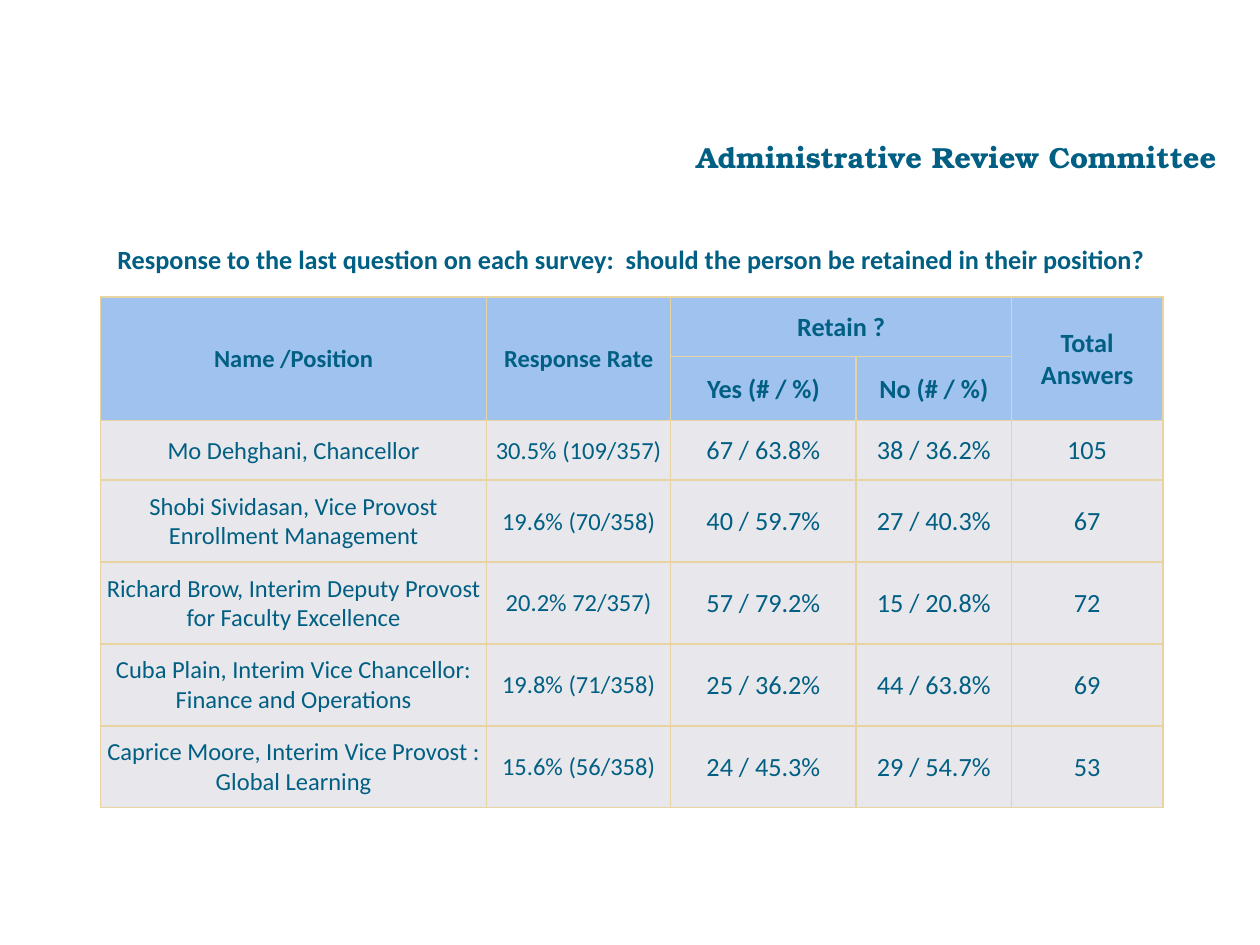
import pptx
import pptx.util
import pptx.dml.color
import pptx.enum.text
import pptx.oxml
import pptx.oxml.ns
from pptx.util import Cm, Pt

ALIGN = pptx.enum.text.PP_ALIGN
ANCHOR = pptx.enum.text.MSO_ANCHOR
INK, GOLD, HEAD, BODY = "005F83", "E8D3A2", "9FC2EF", "E8E7EB"


def color(value):
    return pptx.dml.color.RGBColor.from_string(value)


def write(tf, text, size, bold=False, name="Calibri", align=ALIGN.CENTER):
    p = tf.paragraphs[0]
    p.alignment = align
    r = p.add_run()
    r.text = text
    for key, value in {"size": Pt(size), "bold": bold, "name": name}.items():
        setattr(r.font, key, value)
    r.font.color.rgb = color(INK)
    return p


prs = pptx.Presentation()
prs.slide_width, prs.slide_height = Cm(25.4), Cm(19.05)
s = prs.slides.add_slide(prs.slide_layouts[5])

title = s.shapes.title
box = {"left": Cm(12.73), "top": Cm(2.84), "width": Cm(12.04), "height": Cm(0.81)}
for key, value in box.items():
    setattr(title, key, value)
tf = title.text_frame
tf.auto_size = pptx.enum.text.MSO_AUTO_SIZE.NONE
tf.vertical_anchor = ANCHOR.MIDDLE
p = write(tf, "Administrative Review Committee", 16.6, True, "TeX Gyre Bonum", ALIGN.RIGHT)
p.line_spacing = 0.7

sp = s.shapes.add_textbox(Cm(2.03), Cm(4.78), Cm(21.39), Cm(0.89))
tf = sp.text_frame
tf.word_wrap = False
tf.auto_size = pptx.enum.text.MSO_AUTO_SIZE.SHAPE_TO_FIT_TEXT
write(tf, "Response to the last question on each survey:  "
      "should the person be retained in their position?", 15, True)

rows = [
    ["Name /Position", "Response Rate", "Retain ?", "", "Total Answers"],
    ["", "", "Yes (# / %)", "No (# / %)", ""],
    ["Mo Dehghani, Chancellor", "30.5% (109/357)", "67 / 63.8%", "38 / 36.2%", "105"],
    ["Shobi Sividasan, Vice Provost Enrollment Management",
     "19.6% (70/358)", "40 / 59.7%", "27 / 40.3%", "67"],
    ["Richard Brow, Interim Deputy Provost for Faculty Excellence",
     "20.2% 72/357)", "57 / 79.2%", "15 / 20.8%", "72"],
    ["Cuba Plain, Interim Vice Chancellor: Finance and Operations",
     "19.8% (71/358)", "25 / 36.2%", "44 / 63.8%", "69"],
    ["Caprice Moore, Interim Vice Provost : Global Learning",
     "15.6% (56/358)", "24 / 45.3%", "29 / 54.7%", "53"],
]
widths = [7.78, 3.71, 3.74, 3.13, 3.05]
heights = [1.2, 0.94, 1.2] + [1.65] * 4
tbl = s.shapes.add_table(len(rows), len(widths), Cm(2.03), Cm(5.99),
                         Cm(sum(widths)), Cm(sum(heights))).table
for col, width in zip(tbl.columns, widths):
    col.width = Cm(width)
for row, height in zip(tbl.rows, heights):
    row.height = Cm(height)

cell_format = {"vertical_anchor": ANCHOR.MIDDLE, "margin_left": Cm(0.02),
               "margin_right": Cm(0.02), "margin_top": Cm(0.02), "margin_bottom": 0}
for i, row in enumerate(rows):
    header = i < 2
    for j, text in enumerate(row):
        cell = tbl.cell(i, j)
        for key, value in cell_format.items():
            setattr(cell, key, value)
        if text:
            write(cell.text_frame, text, 14 if j < 2 else 15, header)
        tcPr = cell._tc.get_or_add_tcPr()
        for side in ("lnL", "lnR", "lnT", "lnB"):
            tcPr.append(pptx.oxml.parse_xml(
                f'<a:{side} {pptx.oxml.ns.nsdecls("a")} w="{Pt(1)}"><a:solidFill>'
                f'<a:srgbClr val="{GOLD}"/></a:solidFill></a:{side}>'))
        cell.fill.solid()
        cell.fill.fore_color.rgb = color(HEAD if header else BODY)

for top, left, bottom, right in [(0, 0, 1, 0), (0, 1, 1, 1), (0, 2, 0, 3), (0, 4, 1, 4)]:
    tbl.cell(top, left).merge(tbl.cell(bottom, right))

prs.save("out.pptx")
